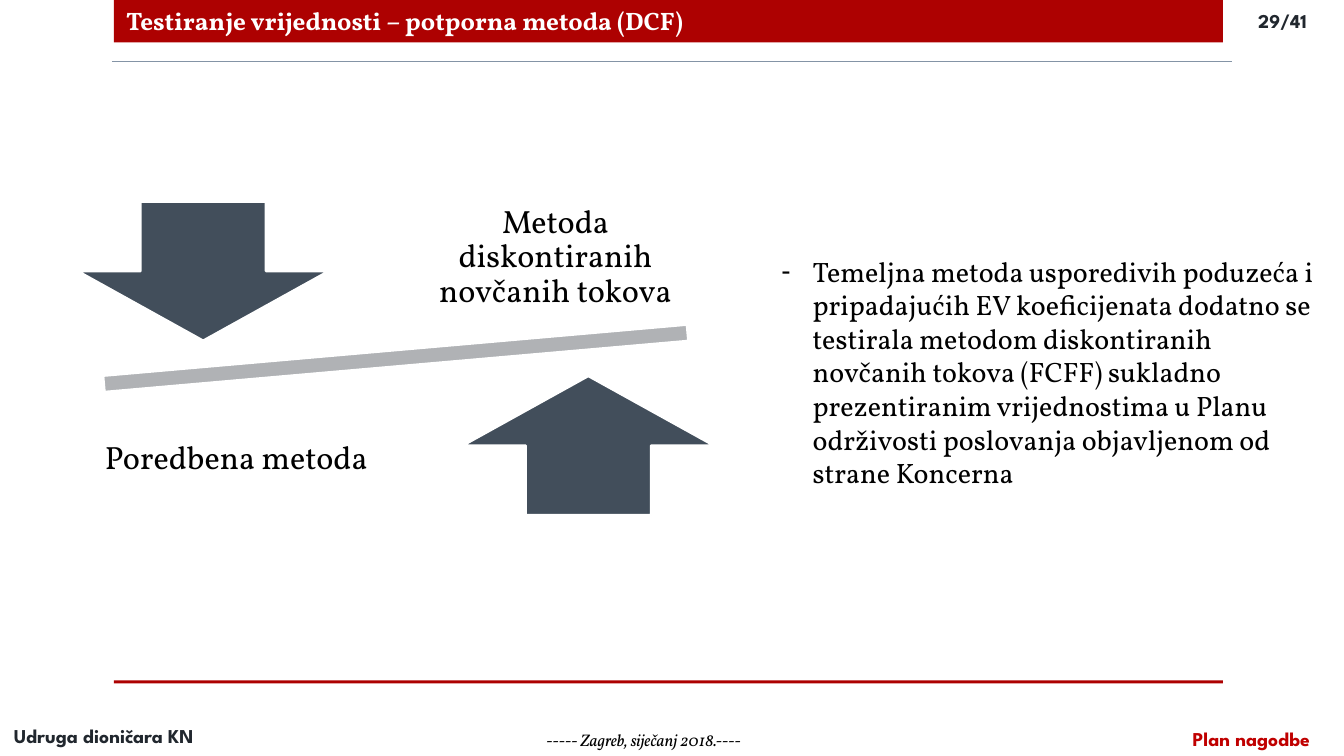
"""Build the slide on testing value with the supporting DCF method."""
import pptx
import pptx.dml.color
import pptx.enum.shapes
import pptx.enum.text
import pptx.oxml
import pptx.oxml.ns
import pptx.util

Inches = pptx.util.Inches
Pt = pptx.util.Pt
SHAPE = pptx.enum.shapes.MSO_SHAPE
ALIGN = pptx.enum.text.PP_ALIGN
ANCHOR = pptx.enum.text.MSO_ANCHOR

COLORS = {
    "red": "AD0101",
    "accent": "C00000",
    "slate": "424E5B",
    "beam": "B0B2B5",
    "rule": "8494A6",
    "ink": "21272E",
    "black": "000000",
    "white": "FFFFFF",
}
SERIF = "Vollkorn"
SANS = "League Spartan"


def color(name):
    """Return the named colour."""
    return pptx.dml.color.RGBColor.from_string(COLORS[name])


def place(shape, left, top, width, height):
    """Move and size a shape, in inches."""
    shape.left, shape.top = Inches(left), Inches(top)
    shape.width, shape.height = Inches(width), Inches(height)


def write(shape, text, size, font=SERIF, ink="black", bold=False, italic=False,
          align=ALIGN.LEFT, anchor=ANCHOR.TOP):
    """Put one formatted paragraph in a shape and return it."""
    frame = shape.text_frame
    frame.text = text
    frame.word_wrap = True
    frame.auto_size = pptx.enum.text.MSO_AUTO_SIZE.NONE
    frame.vertical_anchor = anchor
    paragraph = frame.paragraphs[0]
    paragraph.alignment = align
    paragraph.space_before = Pt(0)
    style = paragraph.runs[0].font
    style.name, style.size = font, Pt(size)
    style.bold, style.italic = bold, italic
    style.color.rgb = color(ink)
    return paragraph


def add_label(slide, box, text, size, **style):
    """Add a text box and return it."""
    label = slide.shapes.add_textbox(*map(Inches, box))
    write(label, text, size, **style)
    return label


def add_method(slide, box, text):
    """Add the centred name of a valuation method."""
    method = add_label(slide, box, text, 23, align=ALIGN.CENTER, anchor=ANCHOR.MIDDLE)
    frame = method.text_frame
    frame.margin_left = frame.margin_right = Inches(0.18)
    frame.margin_top = frame.margin_bottom = Inches(0.18)
    frame.paragraphs[0].line_spacing = 0.9
    frame.paragraphs[0].space_after = Pt(8)


def add_block(slide, kind, box, fill, outlined=False, rotation=0):
    """Add a filled preset shape."""
    block = slide.shapes.add_shape(kind, *map(Inches, box))
    block.shadow.inherit = False
    block.rotation = rotation
    block.fill.solid()
    block.fill.fore_color.rgb = color(fill)
    if outlined:
        block.line.color.rgb = color("white")
        block.line.width = Pt(1.75)
    else:
        block.line.fill.background()


def add_rule(slide, left, right, y):
    """Add the thin horizontal line under the title bar."""
    rule = slide.shapes.add_connector(
        pptx.enum.shapes.MSO_CONNECTOR.STRAIGHT,
        Inches(left), Inches(y), Inches(right), Inches(y))
    rule.line.color.rgb = color("rule")
    rule.line.width = Pt(1.25)
    properties = rule.element.find(pptx.oxml.ns.qn("p:spPr"))
    pptx.oxml.ns.qn("a:effectLst")
    properties.append(pptx.oxml.parse_xml(
        f'<a:effectLst {pptx.oxml.ns.nsdecls("a")}/>'))


def set_dash(paragraph):
    """Give a paragraph a hanging dash bullet."""
    properties = paragraph._p.get_or_add_pPr()
    properties.set("marL", str(Inches(0.31)))
    properties.set("indent", str(-Inches(0.31)))
    properties.append(pptx.oxml.parse_xml(
        f'<a:buChar {pptx.oxml.ns.nsdecls("a")} char="-"/>'))


def add_balance(slide):
    """Draw the tilted beam with its two arrows and method names."""
    add_block(slide, SHAPE.MATH_MINUS, (-0.03, 3.21, 7.91, 0.69), "beam", True, 355)
    add_block(slide, SHAPE.DOWN_ARROW, (0.77, 2, 2.49, 1.38), "slate", True)
    add_method(slide, (3.92, 1.83, 3.18, 1.45), "Metoda diskontiranih novčanih tokova")
    add_block(slide, SHAPE.UP_ARROW, (4.59, 3.73, 2.49, 1.38), "slate", True)
    add_method(slide, (0.79, 3.83, 3.11, 1.45), "Poredbena metoda")


def main():
    """Build and save the slide."""
    deck = pptx.Presentation()
    deck.slide_width, deck.slide_height = Inches(13.33), Inches(7.5)
    slide = deck.slides.add_slide(deck.slide_layouts[1])
    title, body = slide.placeholders

    add_block(slide, SHAPE.RECTANGLE, (1.13, 0, 11, 0.42), "red")
    add_block(slide, SHAPE.RECTANGLE, (1.13, 6.75, 11, 0.03), "red")
    slide.shapes.element.append(title.element)
    place(title, 1.15, 0, 11.73, 0.4)
    write(title, "Testiranje vrijednosti – potporna metoda (DCF)", 18,
          ink="white", bold=True)
    add_rule(slide, 1.11, 12.22, 0.61)

    add_balance(slide)
    place(body, 7.65, 2.47, 5.6, 2.46)
    set_dash(write(
        body,
        "Temeljna metoda usporedivih poduzeća i pripadajućih EV koeficijenata "
        "dodatno se testirala metodom diskontiranih novčanih tokova (FCFF) "
        "sukladno prezentiranim vrijednostima u Planu održivosti poslovanja "
        "objavljenom od strane Koncerna", 20))

    add_label(slide, (12.38, 0.04, 0.89, 0.34), "29/41", 14,
              font=SANS, ink="ink", bold=True)
    add_label(slide, (0.04, 7.13, 2.23, 0.34), "Udruga dioničara KN", 14,
              font=SANS, ink="ink", bold=True)
    add_label(slide, (3.47, 7.19, 5.83, 0.3), "----- Zagreb, siječanj 2018.----", 12,
              italic=True, align=ALIGN.CENTER)
    add_label(slide, (11.73, 7.16, 1.62, 0.34), "Plan nagodbe", 14,
              font=SANS, ink="accent", bold=True)
    deck.save("out.pptx")


if __name__ == "__main__":
    main()
